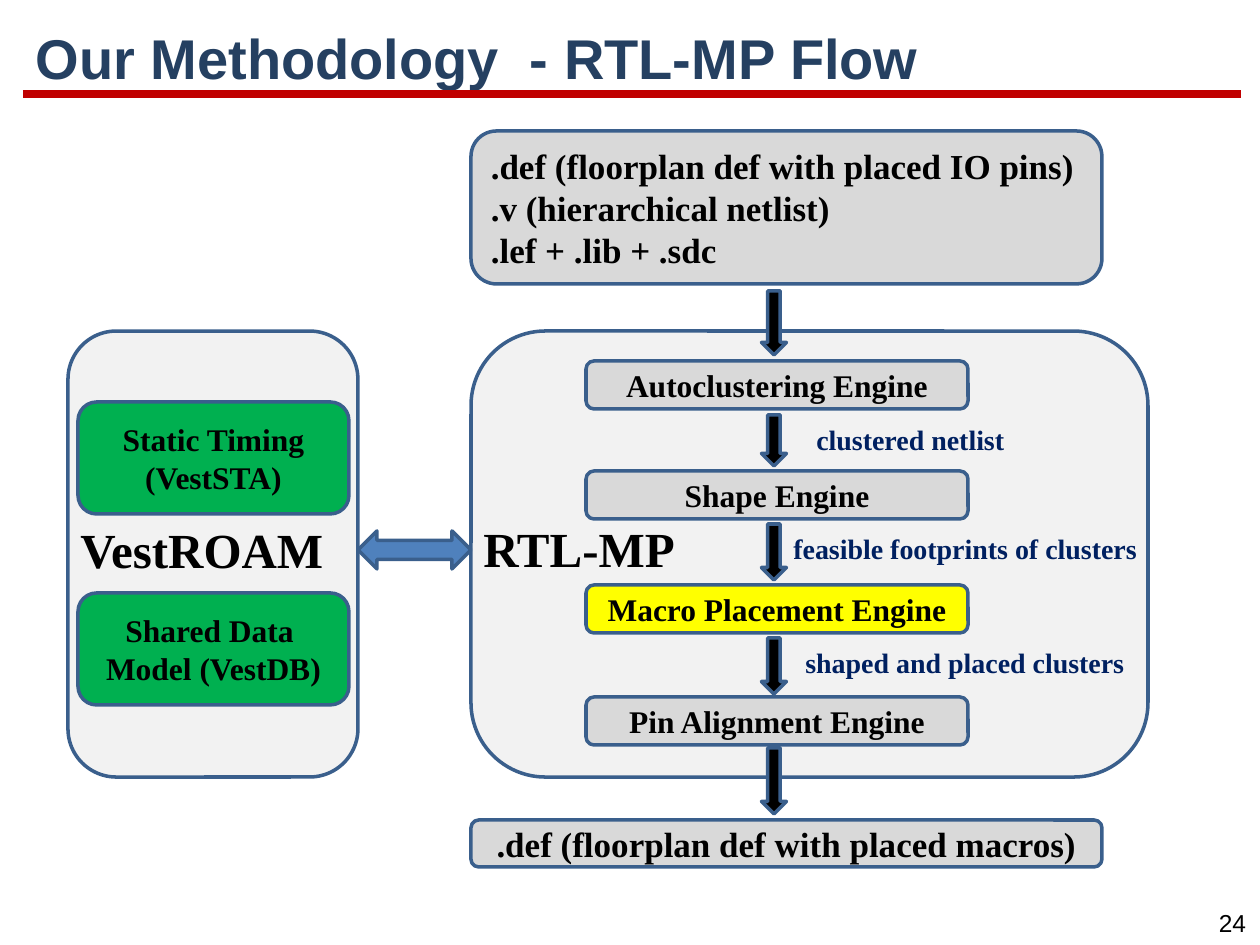
from pptx import Presentation
from pptx.dml.color import RGBColor
from pptx.enum.shapes import MSO_CONNECTOR, MSO_SHAPE
from pptx.enum.text import MSO_ANCHOR, MSO_AUTO_SIZE, PP_ALIGN
from pptx.oxml.ns import qn
from pptx.util import Emu, Pt
from lxml import etree

ROUNDED = MSO_SHAPE.ROUNDED_RECTANGLE
DOWN = MSO_SHAPE.DOWN_ARROW
BOTH_WAYS = MSO_SHAPE.LEFT_RIGHT_ARROW
LEFT, CENTER = PP_ALIGN.LEFT, PP_ALIGN.CENTER
SANS, SERIF = "Arial", "Times New Roman"
BLACK, NAVY, OUTLINE = "000000", "002060", "3A5F8C"
PANEL, GRAY, YELLOW, GREEN, BLUE = "F2F2F2", "D9D9D9", "FFFF00", "00B050", "4F81BD"

TITLE = "Our Methodology  - RTL-MP Flow"
PAGE_NUMBER = "24"
PANELS = [(68, 290), (471, 677)]
PANEL_TOP, PANEL_HEIGHT = 331, 446
STAGES = [
    ("Autoclustering Engine", 361, GRAY),
    ("Shape Engine", 471, GRAY),
    ("Macro Placement Engine", 585, YELLOW),
    ("Pin Alignment Engine", 697, GRAY),
]
STAGE_LEFT, STAGE_WIDTH, STAGE_HEIGHT = 586, 382, 48
ARROWS = [(291, 355), (415, 466), (524, 580), (638, 694), (748, 814)]
ARROW_CENTER, ARROW_WIDTH = 774, 25
RESULTS = [
    ("clustered netlist", 804, 416, 217),
    ("feasible footprints of clusters", 781, 525, 398),
    ("shaped and placed clusters", 793, 639, 381),
]
TOOLS = [("Static Timing\n(VestSTA)", 402), ("Shared Data \nModel (VestDB)", 593)]
PANEL_NAMES = [("VestROAM", 68, 513, 290), ("RTL-MP", 471, 512, 246)]
FILES = [
    (".def (floorplan def with placed IO pins)\n.v (hierarchical netlist)\n.lef + .lib + .sdc",
     131, 153, LEFT),
    (".def (floorplan def with placed macros)", 820, 47, CENTER),
]


def px(length):
    return Emu(round(length * 914400 / 126))


def color(hex_string):
    return RGBColor.from_string(hex_string)


def write(box, text, size, font=SERIF, ink=BLACK, bold=True, align=LEFT):
    frame = box.text_frame
    frame.text = text
    frame.word_wrap = True
    for para in frame.paragraphs:
        para.alignment = align
        for span in para.runs:
            span.font.name = font
            span.font.size = Pt(size)
            span.font.bold = bold
            span.font.color.rgb = color(ink)
    return frame


def add_label(page, text, left, top, width, height, size, **style):
    box = page.shapes.add_textbox(px(left), px(top), px(width), px(height))
    return write(box, text, size, **style)


def add_block(page, kind, left, top, width, height, fill, text="", size=18, align=CENTER):
    block = page.shapes.add_shape(kind, px(left), px(top), px(width), px(height))
    block.shadow.inherit = False
    block.fill.solid()
    block.fill.fore_color.rgb = color(fill)
    block.line.color.rgb = color(OUTLINE)
    block.line.width = Pt(2)
    if text:
        write(block, text, size, align=align).vertical_anchor = MSO_ANCHOR.MIDDLE


def add_heading(page):
    rule = page.shapes.add_connector(MSO_CONNECTOR.STRAIGHT, px(23), px(94), px(1241), px(94))
    rule.line.color.rgb = color("C00000")
    rule.line.width = Pt(4.5)
    etree.SubElement(rule._element.spPr, qn("a:effectLst"))

    title = page.shapes.title
    title.left, title.top, title.width, title.height = px(23), px(20), px(1220), px(82)
    frame = write(title, TITLE, 32, font=SANS, ink="254061")
    frame.auto_size = MSO_AUTO_SIZE.NONE
    frame.vertical_anchor = MSO_ANCHOR.MIDDLE
    frame.paragraphs[0].line_spacing = 0.9

    number = add_label(page, PAGE_NUMBER, 1205, 902, 55, 43, 14,
                       font=SANS, bold=False, align=CENTER)
    number.word_wrap = False


def add_flow(page):
    for left, width in PANELS:
        add_block(page, ROUNDED, left, PANEL_TOP, width, PANEL_HEIGHT, PANEL)
    for text, top, fill in STAGES:
        add_block(page, ROUNDED, STAGE_LEFT, top, STAGE_WIDTH, STAGE_HEIGHT, fill, text)
    for top, bottom in ARROWS:
        add_block(page, DOWN, ARROW_CENTER - ARROW_WIDTH / 2, top,
                  ARROW_WIDTH, bottom - top, BLACK)
    for text, left, top, width in RESULTS:
        add_label(page, text, left, top, width, 47, 16, ink=NAVY)
    for text, top in TOOLS:
        add_block(page, ROUNDED, 78, top, 271, 112, GREEN, text)
    add_block(page, BOTH_WAYS, 358, 531, 113, 38, BLUE)
    for text, left, top, width in PANEL_NAMES:
        add_label(page, text, left, top, width, 72, 28)
    for text, top, height, align in FILES:
        add_block(page, ROUNDED, 471, top, 631, height, GRAY, text, 20, align)


def main():
    deck = Presentation()
    deck.slide_width, deck.slide_height = px(1260), px(945)
    page = deck.slides.add_slide(deck.slide_layouts[5])
    add_heading(page)
    add_flow(page)
    deck.save("out.pptx")


if __name__ == "__main__":
    main()
